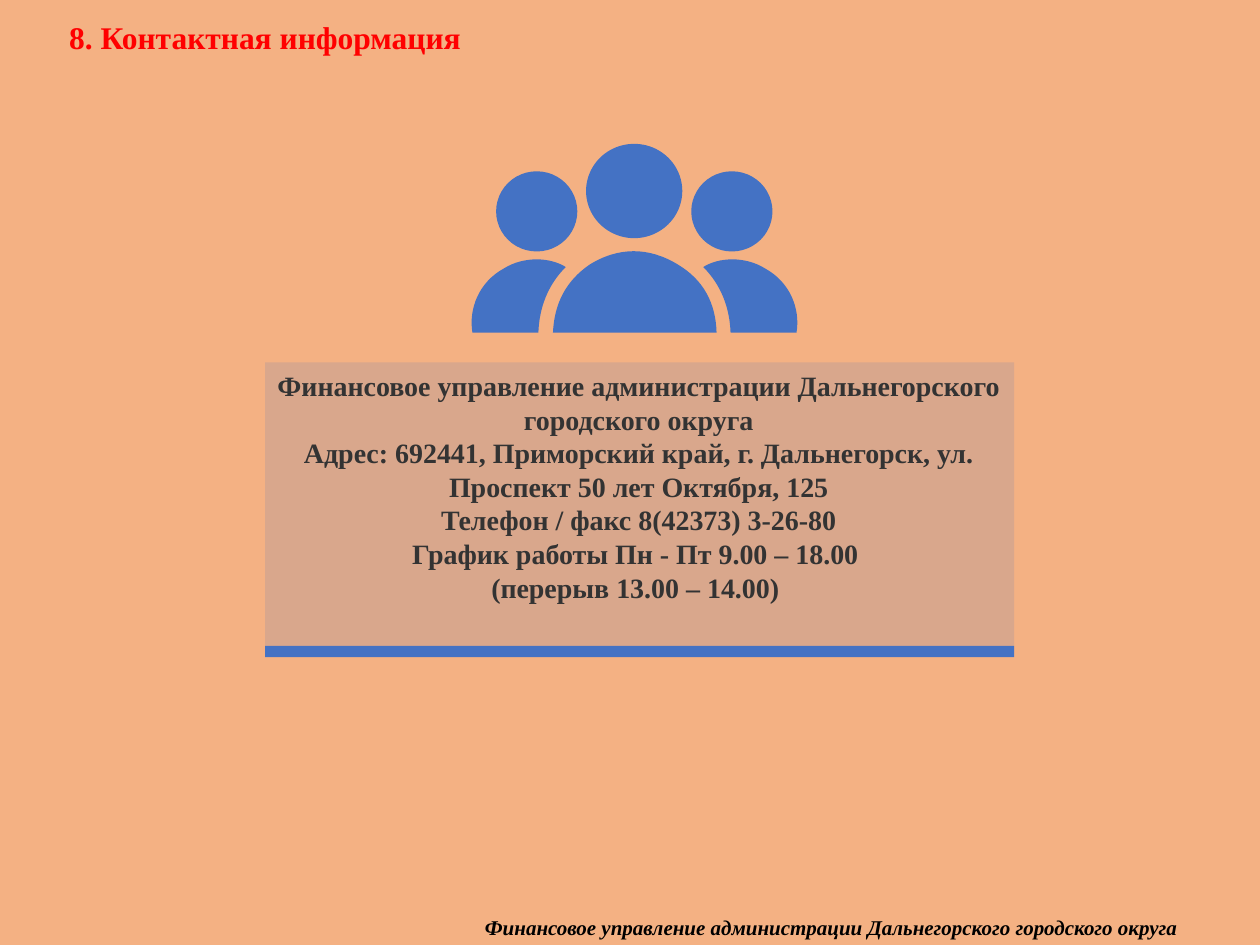
from lxml.etree import SubElement
from pptx import Presentation
from pptx.dml.color import RGBColor
from pptx.enum.shapes import MSO_SHAPE as Preset
from pptx.enum.text import MSO_ANCHOR as Anchor, MSO_AUTO_SIZE as AutoSize, PP_ALIGN as Align
from pptx.oxml.ns import qn
from pptx.util import Pt

COLORS = {
    "background": "F4B183",
    "accent": "4472C4",
    "title": "FF0000",
    "body": "333333",
    "footer": "000000",
}
FONT = "Times New Roman"
AXIS = 362.6
OFFICE = "Финансовое управление администрации Дальнегорского городского округа"
CONTACTS = [
    OFFICE,
    "Адрес: 692441, Приморский край, г. Дальнегорск, ул. Проспект 50 лет Октября, 125",
    "Телефон / факс 8(42373) 3-26-80",
    "График работы Пн - Пт 9.00 – 18.00 ",
    "(перерыв 13.00 – 14.00) ",
]
TORSO = [
    (316, 190),
    (316.8, 173.5), (323.3, 160.6), (337, 151.2),
    (353.5, 141), (370.8, 141), (387.4, 151.2),
    (401.8, 159.8), (409, 172.8), (409.5, 190),
    (378.5, 190), (347, 190), (316, 190),
]
SHOULDER = [
    (270, 190),
    (282.5, 190), (295, 190), (307.7, 190),
    (308.2, 175.7), (313.2, 162.7), (323.3, 152.6),
    (314.6, 147), (299.5, 146.2), (288, 153.4),
    (273.6, 161.3), (267.8, 176.4), (270, 190),
]


def color(name):
    return RGBColor.from_string(COLORS[name])


def place(shape, left, top, width, height):
    shape.left, shape.top = Pt(left), Pt(top)
    shape.width, shape.height = Pt(width), Pt(height)


def paint(shape, opacity=None):
    shape.shadow.inherit = False
    shape.fill.solid()
    shape.fill.fore_color.rgb = color("accent")
    shape.line.fill.background()
    if opacity:
        solid = shape.fill._xPr.find(qn("a:solidFill"))
        SubElement(solid[0], qn("a:alpha"), val=str(opacity * 1000))


def add_preset(page, preset, left, top, width, height, opacity=None):
    shape = page.shapes.add_shape(preset, Pt(left), Pt(top), Pt(width), Pt(height))
    paint(shape, opacity)


def add_curve(page, points):
    knots = [(Pt(x), Pt(y)) for x, y in points]
    builder = page.shapes.build_freeform(*knots[0])
    builder.add_line_segments(knots[1:], close=True)
    shape = builder.convert_to_shape()
    lines = list(shape._element.iter(qn("a:lnTo")))
    for first in range(0, len(lines), 3):
        triple = lines[first:first + 3]
        triple[0].tag = qn("a:cubicBezTo")
        for line in triple[1:]:
            triple[0].append(line[0])
            line.getparent().remove(line)
    paint(shape)


def add_people(page):
    add_curve(page, TORSO)
    add_preset(page, Preset.OVAL, AXIS - 27.7, 82.2, 55, 53.9)
    for center in (AXIS - 55.9, AXIS + 55.6):
        add_preset(page, Preset.OVAL, center - 23.2, 97.9, 46.4, 45.8)
    add_curve(page, [(2 * AXIS - x, y) for x, y in SHOULDER])
    add_curve(page, SHOULDER)


def write(box, lines, size, tone, align, italic=False, indent=0):
    frame = box.text_frame
    frame.word_wrap = True
    frame.auto_size = AutoSize.NONE
    frame.vertical_anchor = Anchor.TOP
    frame.text = "\n".join(lines)
    for para in frame.paragraphs:
        properties = para._p.get_or_add_pPr()
        properties.set("marL", str(Pt(indent)))
        properties.set("indent", "0")
        para.alignment = align
        para.line_spacing = 1.0
        para.space_before = para.space_after = Pt(0)
        SubElement(properties, qn("a:buNone"))
        para.font.name = FONT
        para.font.size = Pt(size)
        para.font.bold = True
        para.font.italic = italic
        para.font.color.rgb = color(tone)


def main():
    deck = Presentation()
    deck.slide_width, deck.slide_height = Pt(720), Pt(540)
    page = deck.slides.add_slide(deck.slide_layouts[1])
    page.background.fill.solid()
    page.background.fill.fore_color.rgb = color("background")

    title = page.shapes.title
    place(title, 0, 6.5, 303, 29)
    write(title, ["8. Контактная информация"], 18, "title", Align.CENTER)

    footer = page.shapes.add_textbox(Pt(247.7), Pt(519), Pt(435.6), Pt(21.6))
    write(footer, [OFFICE], 12, "footer", Align.LEFT, italic=True, indent=22.3)

    add_people(page)
    add_preset(page, Preset.RECTANGLE, 151.5, 207, 428, 166.3, opacity=15)
    add_preset(page, Preset.RECTANGLE, 151.5, 369, 428, 6.5)

    body = page.placeholders[1]
    place(body, 137, 207, 456, 143.3)
    write(body, CONTACTS, 16, "body", Align.CENTER)
    page.shapes._spTree.append(body._element)

    deck.save("out.pptx")


if __name__ == "__main__":
    main()
